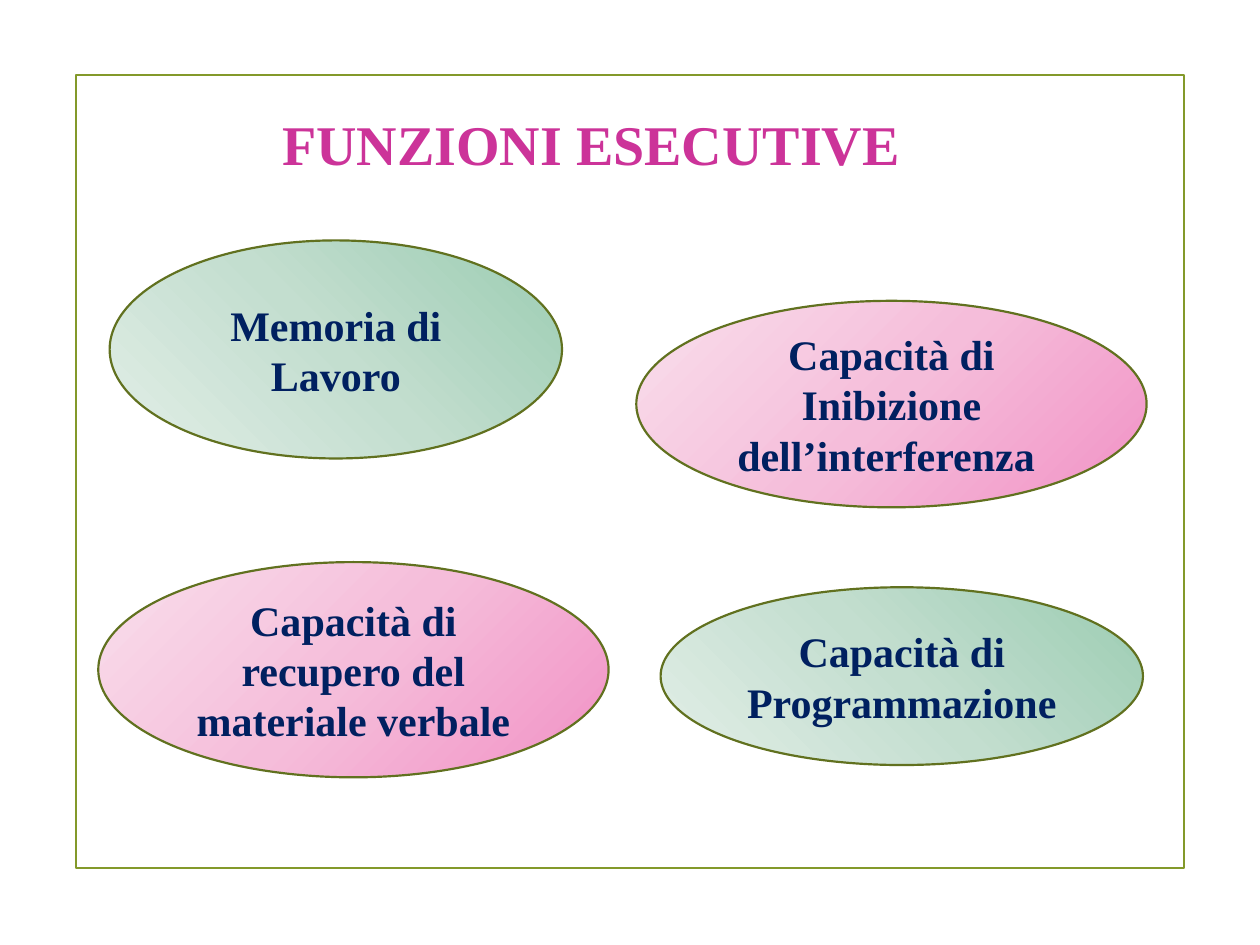
from pptx import Presentation
from pptx.dml.color import RGBColor
from pptx.enum.shapes import MSO_SHAPE
from pptx.enum.text import MSO_ANCHOR, PP_ALIGN
from pptx.oxml import parse_xml
from pptx.oxml.ns import nsdecls
from pptx.util import Pt

# Content
TITLE = "FUNZIONI ESECUTIVE"
FUNCTIONS = [  # text, gradient, (left, top, width, height)
    ("Memoria di Lavoro", "green", (62.64, 137.4, 258.5, 124.6)),
    ("Capacità di Inibizione dell’interferenza ", "pink", (363.6, 171.9, 291.6, 118)),
    ("Capacità di recupero del materiale verbale", "pink", (56.16, 321.2, 291.6, 123)),
    ("Capacità di Programmazione", "green", (377.5, 335.6, 275.6, 101.6)),
]

# Style
FONT = "Times New Roman"
COLORS = {"frame": "83992A", "title": "CC3399", "outline": "61711F", "text": "002060"}
GRADIENTS = {  # stops at 0, 50 and 100 %, then direction
    "green": (("9BCCB2", "C3DECF", "E2EEE7"), '<a:lin ang="8100000" scaled="1"/>'),
    "pink": (("F191C5", "F5BDDA", "F9DFEC"),
             '<a:path path="circle"><a:fillToRect l="100000" t="100000"/></a:path>'),
}


def rgb(name):
    return RGBColor.from_string(COLORS[name])


def add_outlined(s, kind, box, color):
    sp = s.shapes.add_shape(kind, *map(Pt, box))
    sp.shadow.inherit = False
    sp.fill.background()
    sp.line.color.rgb = rgb(color)
    sp.line.width = Pt(1.25)
    return sp


def set_gradient(sp, name):
    colors, direction = GRADIENTS[name]
    stops = "".join(f'<a:gs pos="{i * 50000}"><a:srgbClr val="{c}"/></a:gs>'
                    for i, c in enumerate(colors))
    grad = parse_xml(f'<a:gradFill {nsdecls("a")} rotWithShape="1">'
                     f'<a:gsLst>{stops}</a:gsLst>{direction}</a:gradFill>')
    props = sp.element.spPr
    props.replace(props.find("{*}noFill"), grad)


def add_text(sp, text, size, color, align, anchor):
    tf = sp.text_frame
    tf.word_wrap = True
    tf.vertical_anchor = anchor
    p = tf.paragraphs[0]
    p.alignment = align
    r = p.add_run()
    r.text = text
    r.font.name, r.font.size, r.font.bold = FONT, Pt(size), True
    r.font.color.rgb = rgb(color)


def main():
    prs = Presentation()
    prs.slide_width, prs.slide_height = Pt(720), Pt(540)
    s = prs.slides.add_slide(prs.slide_layouts[6])

    # Frame and title
    add_outlined(s, MSO_SHAPE.RECTANGLE, (43.6, 42.8, 633, 453.4), "frame")
    title = s.shapes.add_textbox(*map(Pt, (154.1, 59, 437.8, 45.4)))
    add_text(title, TITLE, 32, "title", PP_ALIGN.LEFT, MSO_ANCHOR.TOP)

    # Executive functions
    for text, gradient, box in FUNCTIONS:
        sp = add_outlined(s, MSO_SHAPE.OVAL, box, "outline")
        set_gradient(sp, gradient)
        add_text(sp, text, 24, "text", PP_ALIGN.CENTER, MSO_ANCHOR.MIDDLE)

    prs.save("out.pptx")


if __name__ == "__main__":
    main()
